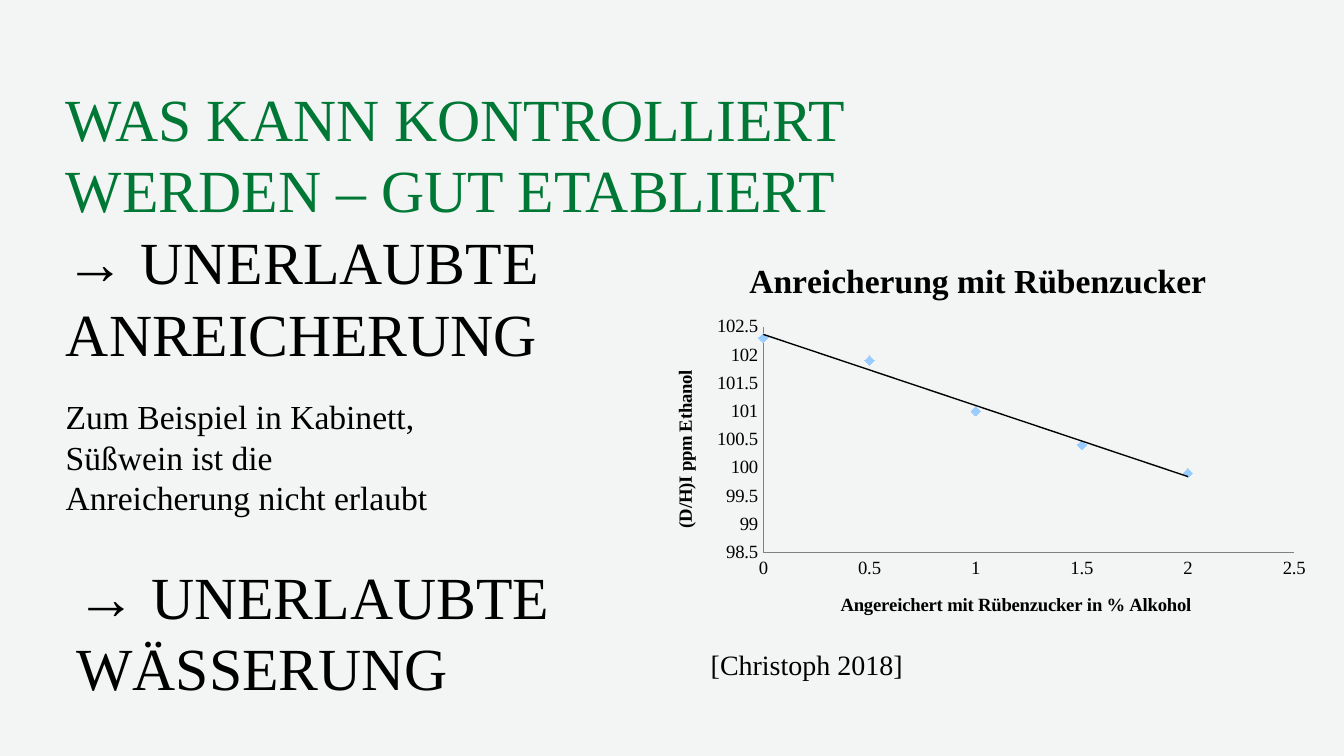
from lxml import etree
from pptx import Presentation
from pptx.chart.data import XyChartData
from pptx.dml.color import RGBColor
from pptx.enum.chart import XL_CHART_TYPE as ChartType
from pptx.enum.chart import XL_MARKER_STYLE as MarkerStyle
from pptx.enum.chart import XL_TICK_MARK as TickMark
from pptx.enum.text import MSO_ANCHOR as Anchor
from pptx.enum.text import MSO_AUTO_SIZE as AutoSize
from pptx.enum.text import PP_ALIGN as Align
from pptx.oxml import parse_xml
from pptx.oxml.ns import nsdecls, qn
from pptx.util import Inches, Pt

BACKGROUND = RGBColor(0xF3, 0xF4, 0xF4)
GREEN = RGBColor(0x00, 0x78, 0x35)
BLACK = RGBColor(0, 0, 0)
GRAY = RGBColor(0x80, 0x80, 0x80)
LIGHT_BLUE = RGBColor(0x99, 0xCC, 0xFF)
FONT = "Times New Roman"
LINE_SPACING = 1.2
SLIDE_WIDTH = 10
MEASUREMENTS = [(0, 102.3), (0.5, 101.9), (1, 101), (1.5, 100.4), (2, 99.9)]


def format_font(font, size, color=BLACK, bold=False):
    font.name = FONT
    font.size = Pt(size)
    font.bold = bold
    font.color.rgb = color


def write_text(shape, lines, size, anchor=Anchor.TOP):
    frame = shape.text_frame
    frame.word_wrap = True
    frame.auto_size = AutoSize.NONE
    frame.vertical_anchor = anchor
    paragraph = frame.paragraphs[0]
    paragraph.alignment = Align.LEFT
    paragraph.line_spacing = Pt(size * LINE_SPACING)
    for index, (text, color) in enumerate(lines):
        if index:
            paragraph.add_line_break()
        run = paragraph.add_run()
        run.text = text
        format_font(run.font, size, color)


def add_title(slide, lines, left, top, width, height):
    title = slide.shapes.title
    title.left, title.top = Inches(left), Inches(top)
    title.width, title.height = Inches(width), Inches(height)
    write_text(title, lines, 32, Anchor.BOTTOM)


def add_text(slide, text, left, top, width, height, **text_format):
    box = slide.shapes.add_textbox(
        Inches(left), Inches(top), Inches(width), Inches(height))
    write_text(box, [(text, BLACK)], **text_format)


def make_layout(target=None, **fractions):
    layout = etree.Element(qn("c:layout"))
    manual = etree.SubElement(layout, qn("c:manualLayout"))
    settings = {"xMode": "edge", "yMode": "edge", **fractions}
    if target:
        settings = {"layoutTarget": target, **settings}
    for name, value in settings.items():
        etree.SubElement(manual, qn(f"c:{name}")).set("val", str(value))
    return layout


def remove_layout(element):
    for layout in element.findall(qn("c:layout")):
        element.remove(layout)


def write_chart_title(title, text, size, x, y):
    frame = title.text_frame
    frame.text = text
    format_font(frame.paragraphs[0].runs[0].font, size, bold=True)
    element = title._element
    remove_layout(element)
    element.find(qn("c:tx")).addnext(make_layout(x=x, y=y))


def format_axis(axis, minimum, maximum):
    axis.minimum_scale, axis.maximum_scale = minimum, maximum
    axis.major_unit = 0.5
    axis.has_major_gridlines = False
    axis.major_tick_mark = axis.minor_tick_mark = TickMark.NONE
    axis.format.line.color.rgb = GRAY
    axis.format.line.width = Pt(0.5)
    axis.tick_labels.number_format = "General"
    axis.tick_labels.number_format_is_linked = False


def add_trend_line(series):
    trend_line = parse_xml(
        f'<c:trendline {nsdecls("c", "a")}>'
        f'<c:spPr><a:ln w="{Pt(0.75)}"><a:solidFill><a:srgbClr val="{BLACK}"/>'
        '</a:solidFill></a:ln></c:spPr><c:trendlineType val="linear"/>'
        '<c:dispRSqr val="0"/><c:dispEq val="0"/></c:trendline>')
    series._element.find(qn("c:xVal")).addprevious(trend_line)


def add_scatter_chart(slide, left, top, width, height):
    data = XyChartData()
    points = data.add_series("Series 1")
    for alcohol, ratio in MEASUREMENTS:
        points.add_data_point(alcohol, ratio)
    chart = slide.shapes.add_chart(
        ChartType.XY_SCATTER, Inches(left), Inches(top),
        Inches(width), Inches(height), data).chart
    format_font(chart.font, 10)
    chart.has_legend = False
    chart.plots[0].vary_by_categories = False

    format_axis(chart.category_axis, 0, 2.5)
    format_axis(chart.value_axis, 98.5, 102.5)
    write_chart_title(chart.chart_title, "Anreicherung mit Rübenzucker", 18, 0.14, 0.03)
    write_chart_title(chart.category_axis.axis_title,
                      "Angereichert mit Rübenzucker in % Alkohol", 10, 0.28, 0.86)
    write_chart_title(chart.value_axis.axis_title, "(D/H)I ppm Ethanol", 10, 0.03, 0.31)

    series = chart.plots[0].series[0]
    series.format.line.fill.background()
    series.marker.style = MarkerStyle.DIAMOND
    series.marker.size = 5
    series.marker.format.fill.solid()
    series.marker.format.fill.fore_color.rgb = LIGHT_BLUE
    series.marker.format.line.fill.background()
    add_trend_line(series)

    plot_area = chart._chartSpace.find(f'.//{qn("c:plotArea")}')
    remove_layout(plot_area)
    plot_area.insert(0, make_layout("inner", x=0.17, y=0.21, w=0.79, h=0.56))


def main():
    presentation = Presentation()
    presentation.slide_width = Inches(SLIDE_WIDTH)
    presentation.slide_height = Inches(SLIDE_WIDTH * 9 / 16)
    slide = presentation.slides.add_slide(presentation.slide_layouts[5])
    slide.background.fill.solid()
    slide.background.fill.fore_color.rgb = BACKGROUND

    add_title(slide, [("WAS KANN KONTROLLIERT WERDEN – GUT ETABLIERT", GREEN),
                      ("→ UNERLAUBTE ANREICHERUNG", BLACK)], 0.39, 2.13, 6.46, 0.66)
    add_scatter_chart(slide, 4.83, 1.8, 5, 3)
    add_text(slide, "[Christoph 2018]", 5.19, 4.77, 2.43, 0.35, size=15)
    add_text(slide, "Zum Beispiel in Kabinett, Süßwein ist die Anreicherung nicht erlaubt",
             0.39, 2.9, 3.08, 1.01, size=18)
    add_text(slide, "→ UNERLAUBTE WÄSSERUNG", 0.47, 4.62, 6.46, 0.66,
             size=32, anchor=Anchor.BOTTOM)
    presentation.save("out.pptx")


if __name__ == "__main__":
    main()
